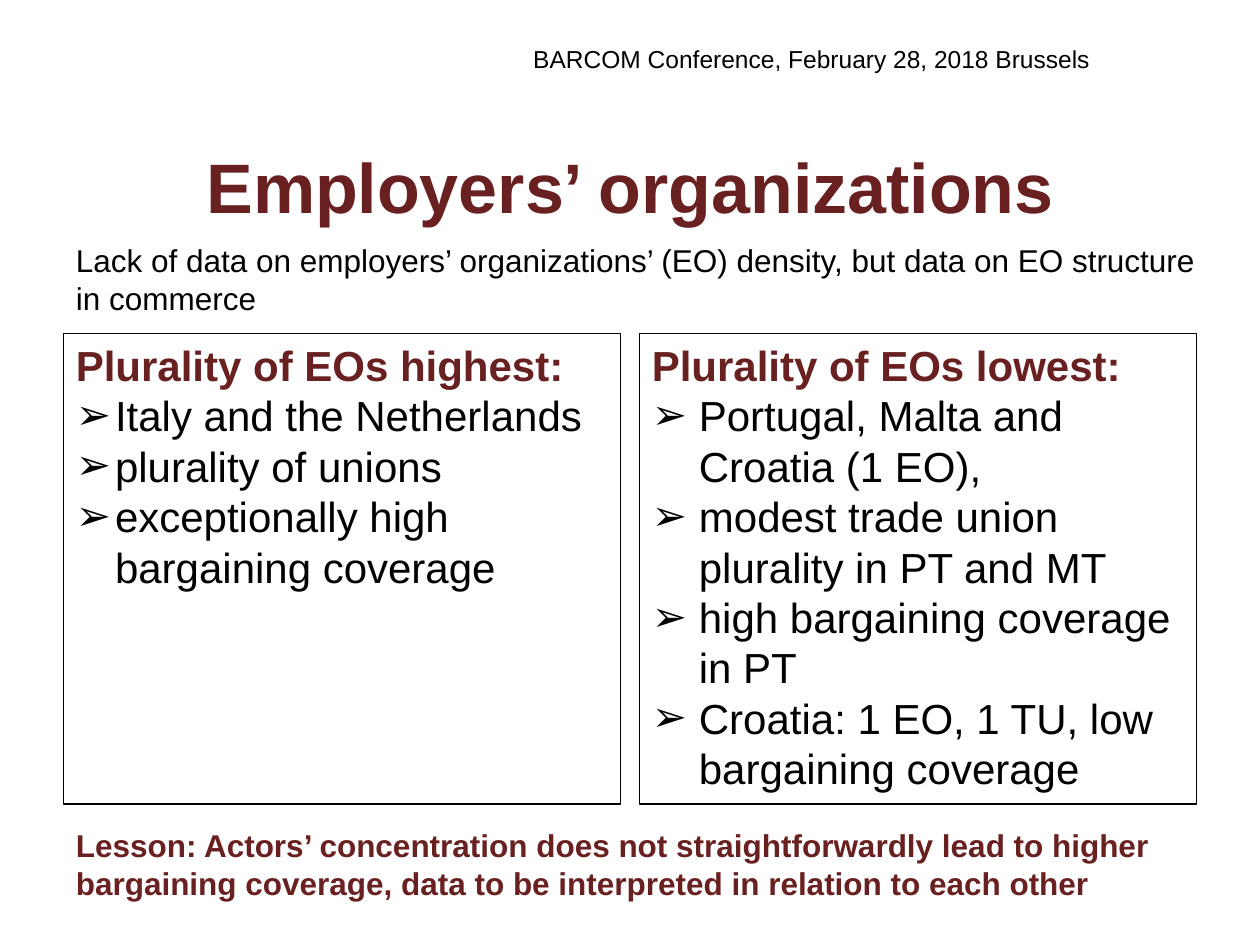
from dataclasses import dataclass

from lxml import etree
from pptx import Presentation
from pptx import util as u
from pptx.dml.color import RGBColor
from pptx.enum import shapes, text
from pptx.oxml import ns


@dataclass(frozen=True)
class Theme:
    font: str = "Arial"
    accent: RGBColor = RGBColor(0x69, 0x20, 0x20)
    ink: RGBColor = RGBColor(0, 0, 0)
    paper: RGBColor = RGBColor(255, 255, 255)
    title: int = 40
    panel: int = 24
    body: int = 18
    header: int = 14


@dataclass(frozen=True)
class Area:
    left: float
    top: float
    width: float
    height: float

    def lengths(self) -> tuple:
        return tuple(u.Cm(v) for v in (self.left, self.top, self.width, self.height))


@dataclass(frozen=True)
class Panel:
    heading: str
    items: tuple
    indent: float
    filled: bool


THEME = Theme()
PANEL_AREA = Area(1.28, 6.72, 11.23, 9.49)
PANEL_PITCH = 11.61
PANELS = (
    Panel("Plurality of EOs highest:", (
        "Italy and the Netherlands",
        "plurality of unions",
        "exceptionally high bargaining coverage",
    ), 0.79, True),
    Panel("Plurality of EOs lowest:", (
        "Portugal, Malta and Croatia (1 EO),",
        "modest trade union plurality in PT and MT",
        "high bargaining coverage in PT",
        "Croatia: 1 EO, 1 TU, low bargaining coverage",
    ), 0.95, False),
)


def write(para, words: str, *, size: int, color=THEME.ink, bold=False,
          align=text.PP_ALIGN.LEFT) -> None:
    para.alignment = align
    span = para.add_run()
    span.text = words
    span.font.name = THEME.font
    span.font.size = u.Pt(size)
    span.font.bold = bold
    span.font.color.rgb = color


def add_bullet(para, indent: float) -> None:
    properties = para._p.get_or_add_pPr()
    properties.set("marL", str(u.Cm(indent)))
    properties.set("indent", str(-u.Cm(indent)))
    etree.SubElement(properties, ns.qn("a:buFont")).set("typeface", THEME.font)
    etree.SubElement(properties, ns.qn("a:buChar")).set("char", "➢")


def add_label(page, area: Area, words: str, **style) -> None:
    frame = page.shapes.add_textbox(*area.lengths()).text_frame
    frame.word_wrap = True
    write(frame.paragraphs[0], words, **style)


def add_panel(page, panel: Panel, area: Area) -> None:
    box = page.shapes.add_shape(shapes.MSO_SHAPE.RECTANGLE, *area.lengths())
    box.shadow.inherit = False
    if panel.filled:
        box.fill.solid()
        box.fill.fore_color.rgb = THEME.paper
    else:
        box.fill.background()
    box.line.color.rgb = THEME.ink
    box.line.width = u.Pt(0.75)
    frame = box.text_frame
    frame.word_wrap = True
    frame.vertical_anchor = text.MSO_ANCHOR.TOP
    write(frame.paragraphs[0], panel.heading, size=THEME.panel,
          color=THEME.accent, bold=True)
    for item in panel.items:
        para = frame.add_paragraph()
        add_bullet(para, panel.indent)
        write(para, item, size=THEME.panel)


def set_title(page, area: Area, words: str) -> None:
    title = page.shapes.title
    title.left, title.top, title.width, title.height = area.lengths()
    title.text_frame.vertical_anchor = text.MSO_ANCHOR.MIDDLE
    write(title.text_frame.paragraphs[0], words, size=THEME.title,
          color=THEME.accent, bold=True, align=text.PP_ALIGN.CENTER)


def main() -> None:
    deck = Presentation()
    deck.slide_width, deck.slide_height = u.Cm(25.4), u.Cm(19.05)
    page = deck.slides.add_slide(deck.slide_layouts[5])
    set_title(page, Area(1.27, 2.14, 22.86, 3.18), "Employers’ organizations")
    add_label(page, Area(1.28, 4.73, 23.24, 1.8),
              "Lack of data on employers’ organizations’ (EO) density, "
              "but data on EO structure in commerce", size=THEME.body)
    add_label(page, Area(10.5, 0.76, 12.42, 0.86),
              "BARCOM Conference, February 28, 2018 Brussels", size=THEME.header)
    for column, panel in enumerate(PANELS):
        left = PANEL_AREA.left + column * PANEL_PITCH
        add_panel(page, panel, Area(left, PANEL_AREA.top,
                                    PANEL_AREA.width, PANEL_AREA.height))
    add_label(page, Area(1.28, 16.53, 23.24, 1.8),
              "Lesson: Actors’ concentration does not straightforwardly lead to "
              "higher bargaining coverage, data to be interpreted in relation to "
              "each other", size=THEME.body, color=THEME.accent, bold=True)
    deck.save("out.pptx")


if __name__ == "__main__":
    main()
